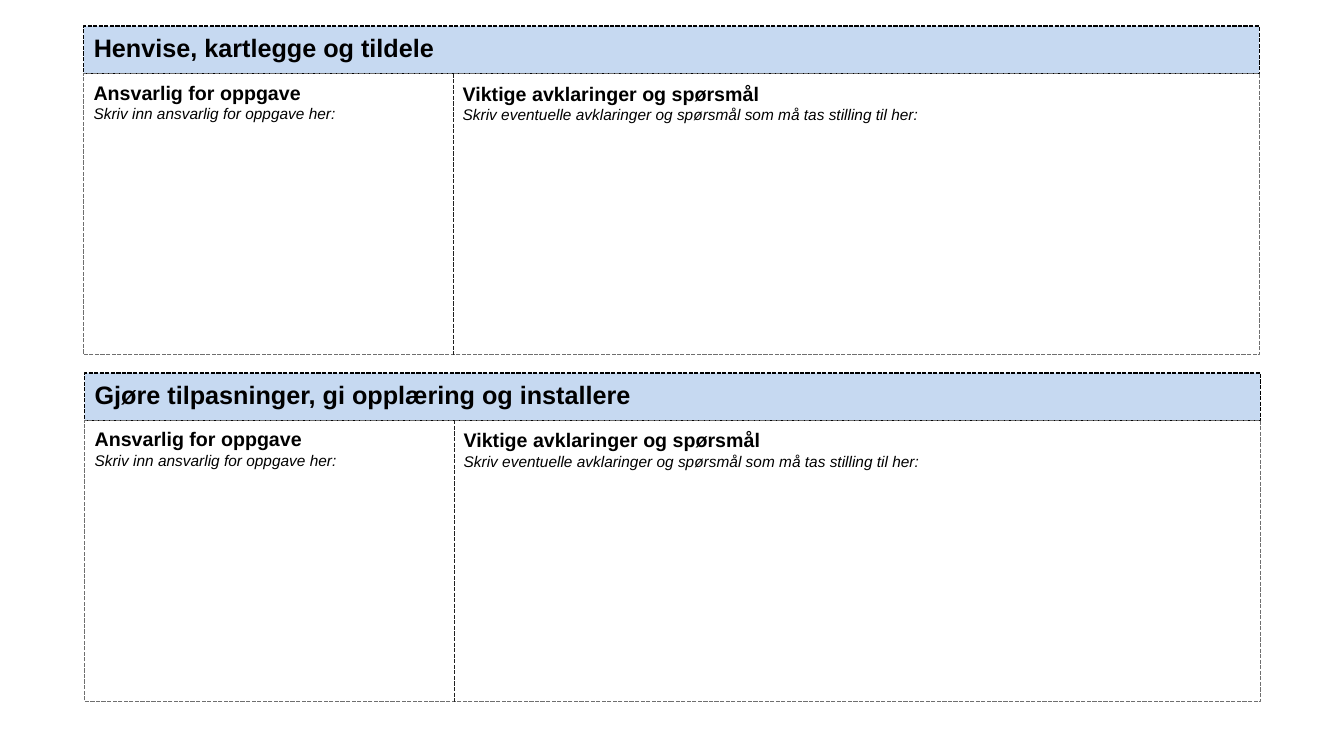
from lxml import etree
from pptx import Presentation
from pptx.dml.color import RGBColor
from pptx.enum import dml, shapes, text
from pptx.oxml import ns
from pptx.util import Inches, Pt

PARTS = [
    ("Henvise, kartlegge og tildele", 0.83, 0.26),
    ("Gjøre tilpasninger, gi opplæring og installere", 0.84, 3.7),
]
FIELDS = [
    ("Ansvarlig for oppgave", "Skriv inn ansvarlig for oppgave her:",
     0, 0.49, 3.66, 0.52),
    ("Viktige avklaringer og spørsmål",
     "Skriv eventuelle avklaringer og spørsmål som må tas stilling til her:",
     3.66, 0.5, 7.55, 0.54),
]
WIDTH, HEAD, BODY, SPLIT = 11.66, 0.47, 2.79, 3.67


def tint(color, value):
    color.rgb = RGBColor.from_string(value)


def dash(line, value):
    tint(line.color, value)
    line.width = Pt(1)
    line.dash_style = dml.MSO_LINE.SQUARE_DOT


def put(frame, words, first=False, size=14, bold=False, italic=False):
    para = frame.paragraphs[0] if first else frame.add_paragraph()
    para.alignment = text.PP_ALIGN.LEFT
    run = para.add_run()
    run.text = words
    font = run.font
    font.name, font.size = "Arial", Pt(size)
    font.bold, font.italic = bold, italic
    tint(font.color, "000000")


def panel(slide, left, top, height, edge, fill=None):
    box = slide.shapes.add_shape(
        shapes.MSO_SHAPE.RECTANGLE,
        Inches(left), Inches(top), Inches(WIDTH), Inches(height))
    box.shadow.inherit = False
    if fill:
        box.fill.solid()
        tint(box.fill.fore_color, fill)
    else:
        box.fill.background()
    dash(box.line, edge)


def place(box, left, top, width, height):
    box.left, box.top = Inches(left), Inches(top)
    box.width, box.height = Inches(width), Inches(height)
    frame = box.text_frame
    frame.word_wrap = True
    frame.auto_size = text.MSO_AUTO_SIZE.NONE
    frame.vertical_anchor = text.MSO_ANCHOR.TOP
    return frame


def label(slide, *spot):
    return place(slide.shapes.add_textbox(0, 0, 0, 0), *spot)


def split(slide, left, top):
    line = slide.shapes.add_connector(
        shapes.MSO_CONNECTOR.STRAIGHT, Inches(left), Inches(top),
        Inches(left), Inches(top + BODY))
    dash(line.line, "202020")
    etree.SubElement(line._element.spPr, ns.qn("a:effectLst"))


def main():
    deck = Presentation()
    deck.slide_width, deck.slide_height = Inches(13.33), Inches(7.5)
    slide = deck.slides.add_slide(deck.slide_layouts[5])
    title = slide.shapes.title
    for part, (name, left, top) in enumerate(PARTS):
        panel(slide, left, top, HEAD, "000000", "C6D9F1")
        panel(slide, left, top + HEAD, BODY, "6F6F6F")
        spot = (left, top + 0.01, 6.88, 0.46)
        if part == 0:
            slide.shapes._spTree.append(title._element)
            frame = place(title, *spot)
        else:
            frame = label(slide, *spot)
        put(frame, name, first=True, size=18, bold=True)
        split(slide, left + SPLIT, top + HEAD)
        for head, hint, right, down, width, height in FIELDS:
            frame = label(slide, left + right, top + down, width, height)
            put(frame, head, first=True, bold=True)
            put(frame, hint, size=11, italic=True)
    deck.save("out.pptx")


if __name__ == "__main__":
    main()
